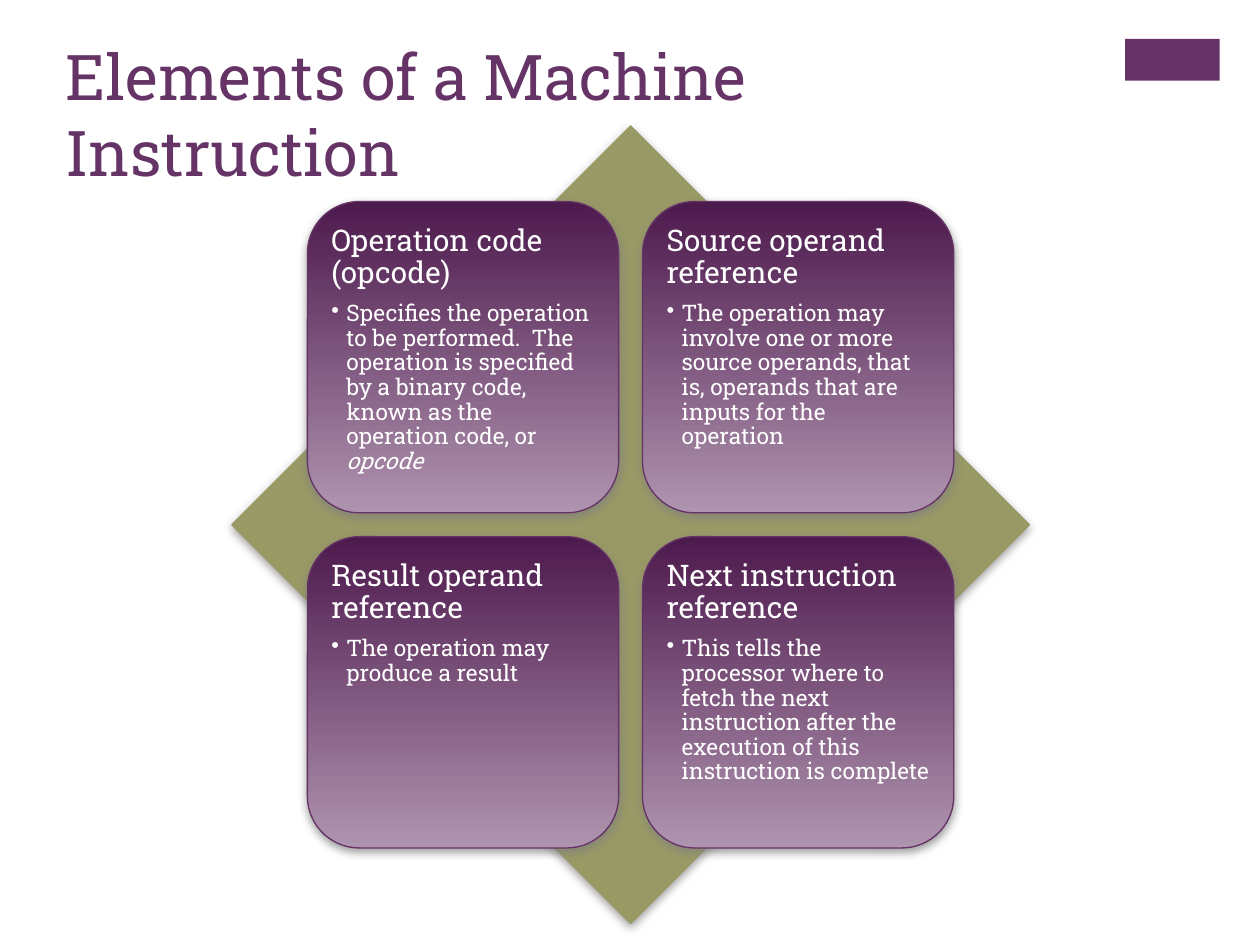
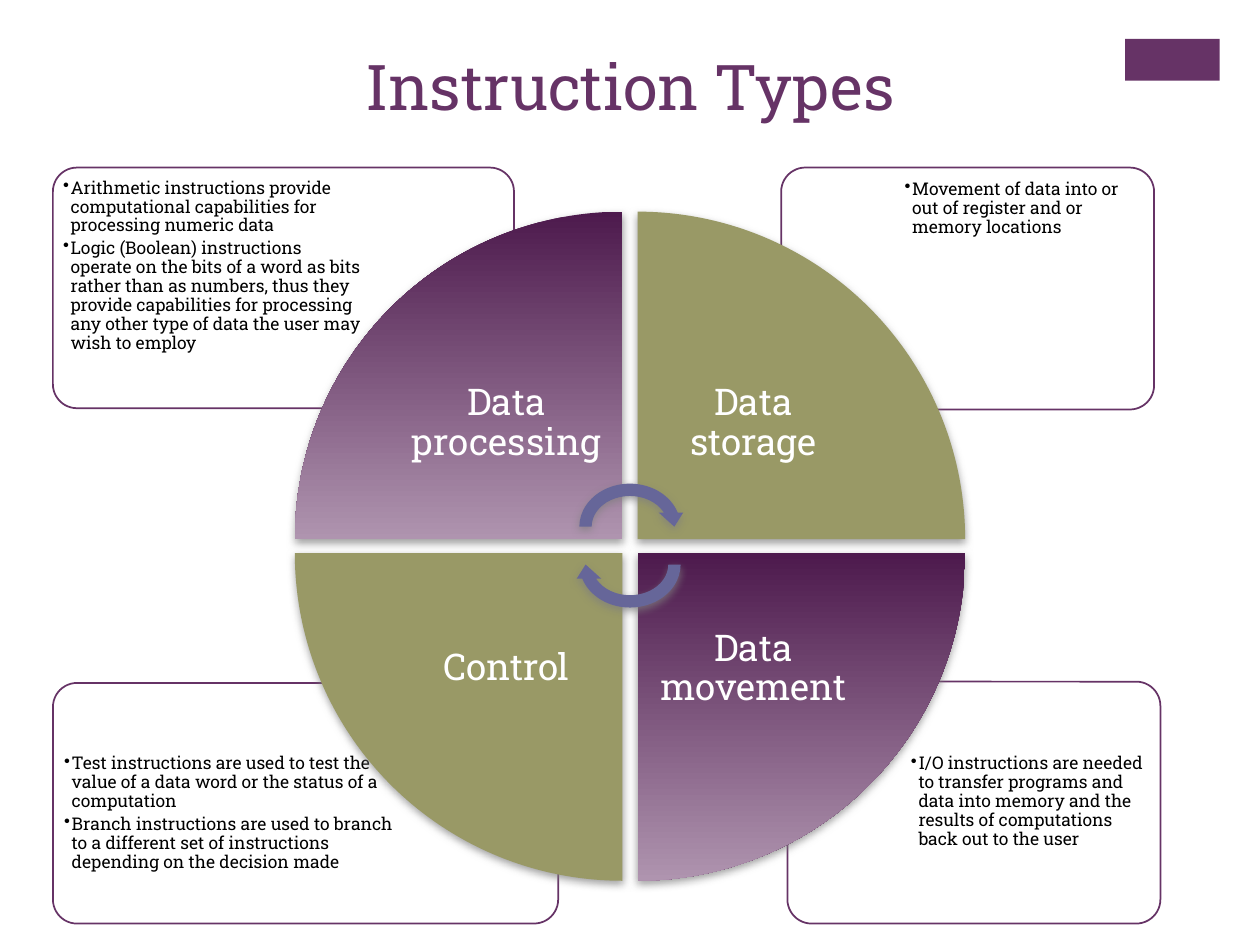
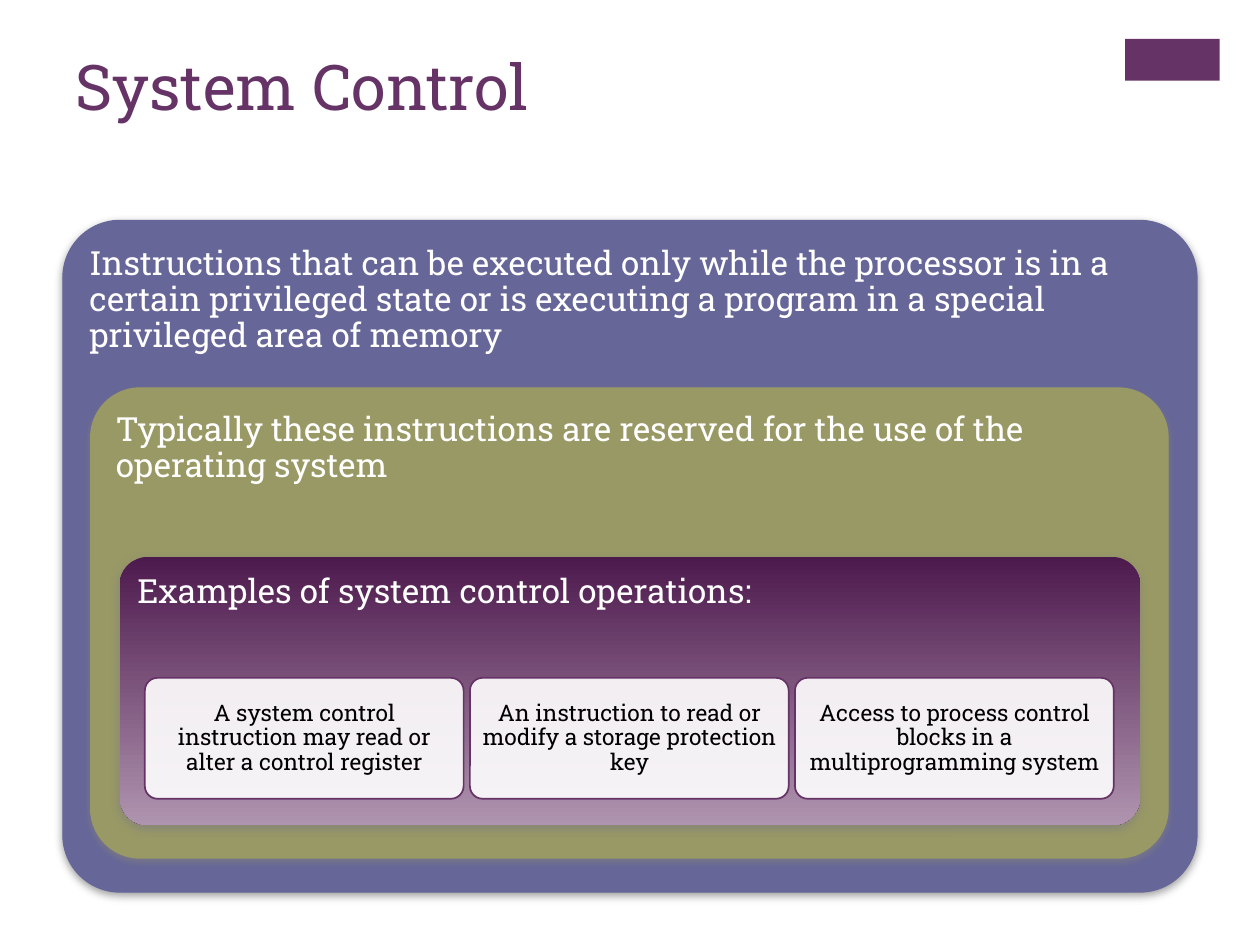
from lxml import etree
from pptx import Presentation
from pptx.dml.color import RGBColor
from pptx.enum.shapes import MSO_SHAPE
from pptx.enum.text import MSO_ANCHOR, MSO_AUTO_SIZE, PP_ALIGN
from pptx.oxml.ns import qn
from pptx.util import Pt

PX = 9144  # EMU per px, 100 px to the inch
FONT = "Roboto Slab"
PURPLE, OLIVE, SLATE = "663366", "999966", "666699"
WHITE, BLACK, GREY = "FFFFFF", "000000", "808080"
FADE = ("4D1A4D", "AF94AF")  # top and bottom of the gradient
RECT, ROUNDED, DIAMOND = MSO_SHAPE.RECTANGLE, MSO_SHAPE.ROUNDED_RECTANGLE, MSO_SHAPE.DIAMOND
WEDGE, CIRCULAR_ARROW = MSO_SHAPE.PIE_WEDGE, MSO_SHAPE.CIRCULAR_ARROW
TOP, MIDDLE = MSO_ANCHOR.TOP, MSO_ANCHOR.MIDDLE
LEFT, CENTER = PP_ALIGN.LEFT, PP_ALIGN.CENTER
NO_AUTOFIT = MSO_AUTO_SIZE.NONE
rgb = RGBColor.from_string


def add_panel(slide, kind, box, fill, line=None, width=0.75, corner=None, rotation=0, shadow=True):
    panel = slide.shapes.add_shape(kind, *[n * PX for n in box])
    panel.rotation = rotation
    if corner:
        panel.adjustments[0] = corner
    props = panel.element.spPr
    if fill == FADE:
        panel.fill.gradient()
        panel.fill.gradient_angle = 270
        props.find(qn("a:gradFill")).set("rotWithShape", "0")
        for stop, color, position in zip(panel.fill.gradient_stops, FADE, (0, 1)):
            stop.color.rgb = rgb(color)
            stop.position = position
    else:
        panel.fill.solid()
        panel.fill.fore_color.rgb = rgb(fill)
        if fill == WHITE:
            etree.SubElement(props.find(".//" + qn("a:srgbClr")), qn("a:alpha"), val="90000")
    if line:
        panel.line.color.rgb = rgb(line)
        panel.line.width = Pt(width)
    else:
        panel.line.fill.background()
    panel.shadow.inherit = False
    if shadow:
        outer = etree.SubElement(props.find(qn("a:effectLst")), qn("a:outerShdw"), blurRad="63500",
                                 dist="25400", dir="5400000", rotWithShape="0")
        tint = etree.SubElement(outer, qn("a:srgbClr"), val=GREY)
        etree.SubElement(tint, qn("a:alpha"), val="75000")
    return panel


def add_text(slide, box, paragraphs, color, inset, anchor=TOP, align=LEFT):
    """Each paragraph is (text, size, bullet indent); *stars* mark italics."""
    frame = slide.shapes.add_textbox(*[n * PX for n in box]).text_frame
    frame_format = {"word_wrap": True, "auto_size": NO_AUTOFIT, "vertical_anchor": anchor}
    for side in ("left", "top", "right", "bottom"):
        frame_format["margin_" + side] = inset * PX
    for name, value in frame_format.items():
        setattr(frame, name, value)
    for index, (text, size, indent) in enumerate(paragraphs):
        paragraph = frame.paragraphs[0] if index == 0 else frame.add_paragraph()
        if indent:
            props = paragraph._p.get_or_add_pPr()
            props.set("marL", str(indent * PX))
            props.set("indent", str(-indent * PX))
            etree.SubElement(props, qn("a:buChar"), char="•")
        paragraph_format = {"alignment": align, "line_spacing": 0.9,
                            "level": 1 if indent else 0, "space_after": Pt(2 if indent else 7)}
        for name, value in paragraph_format.items():
            setattr(paragraph, name, value)
        for part, piece in enumerate(text.split("*")):
            if piece:
                run = paragraph.add_run()
                run.text = piece
                run_format = {"name": FONT, "size": Pt(size), "italic": part == 1}
                for name, value in run_format.items():
                    setattr(run.font, name, value)
                run.font.color.rgb = rgb(color)


prs = Presentation()
prs.slide_width, prs.slide_height = 1000 * PX, 750 * PX

# Titles
titles = [
    ("Elements of a Machine Instruction", (42, 25, 826, 122), LEFT),
    ("Instruction Types", (0, 33, 1000, 122), CENTER),
    ("System Control", (50, 33, 826, 122), LEFT),
]
for text, box, align in titles:
    title = prs.slides.add_slide(prs.slide_layouts[5]).shapes.title
    title.left, title.top, title.width, title.height = [n * PX for n in box]
    title.text_frame.text = text
    title.text_frame.auto_size = NO_AUTOFIT
    title.text_frame.vertical_anchor = TOP
    heading = title.text_frame.paragraphs[0]
    heading.alignment = align
    for name, value in {"name": FONT, "size": Pt(36)}.items():
        setattr(heading.runs[0].font, name, value)
    heading.runs[0].font.color.rgb = rgb(PURPLE)
elements, types, control = prs.slides

# Corner band, moved to the master so that every slide shows it
band = add_panel(elements, RECT, (893, 31, 75, 33), PURPLE, shadow=False)
prs.slide_master.shapes.element.append(band.element)

# Slide 1: four elements on a diamond
add_panel(elements, DIAMOND, (184, 100, 633, 633), OLIVE, OLIVE)
instruction_elements = [
    ("Operation code (opcode)",
     "Specifies the operation to be performed.  The operation is specified by a binary code, "
     "known as the operation code, or *opcode*"),
    ("Source operand reference",
     "The operation may involve one or more source operands, that is, operands that are "
     "inputs for the operation"),
    ("Result operand reference", "The operation may produce a result"),
    ("Next instruction reference",
     "This tells the processor where to fetch the next instruction after the execution of "
     "this instruction is complete"),
]
for index, (name, meaning) in enumerate(instruction_elements):
    row, column = divmod(index, 2)
    x, y = 244 + 266 * column, 160 + 266 * row
    add_panel(elements, ROUNDED, (x, y, 247, 247), FADE, PURPLE)
    add_text(elements, (x + 12, y + 12, 223, 223), [(name, 17, 0), (meaning, 13, 12)], WHITE, 7)

# Slide 2: explanations in the corners
explanations = [
    ((625, 541, 296, 192), (718, 594, 199, 136), 5,
     ["I/O instructions are needed to transfer programs and data into memory and the results "
      "of computations back out to the user"]),
    ((42, 542, 401, 191), (46, 594, 273, 135), 5,
     ["Test instructions are used to test the value of a data word or the status of a computation",
      "Branch instructions are used to branch to a different set of instructions depending on "
      "the decision made"]),
    ((620, 133, 296, 192), (713, 138, 199, 136), 5,
     ["Movement of data into or out of register and or memory locations"]),
    ((42, 133, 366, 191), (46, 138, 248, 135), 4,
     ["Arithmetic instructions provide computational capabilities for processing numeric data",
      "Logic (Boolean) instructions operate on the bits of a word as bits rather than as "
      "numbers, thus they provide capabilities for processing any other type of data the user "
      "may wish to employ"]),
]
for card, text_area, inset, points in explanations:
    add_panel(types, ROUNDED, card, WHITE, PURPLE, 1, 0.1, shadow=False)
    add_text(types, text_area, [(point, 10, 6) for point in points], BLACK, inset)

# Slide 2: wheel of four types, clockwise from top left
wheel = [
    ("Data processing", 0, 0, FADE),
    ("Data storage", 1, 0, OLIVE),
    ("Data movement", 1, 1, FADE),
    ("Control", 0, 1, OLIVE),
]
for index, (name, column, row, fill) in enumerate(wheel):
    x, y = 234 + 272 * column, 168 + 271 * row
    add_panel(types, WEDGE, (x, y, 260, 260), fill, rotation=90 * index)
    label = (x + 76 * (1 - column), y + 76 * (1 - row), 184, 184)
    add_text(types, label, [(name, 21, 0)], WHITE, 16, MIDDLE, CENTER)
for y, rotation in ((379, 0), (409, 180)):
    add_panel(types, CIRCULAR_ARROW, (455, y, 90, 78), SLATE, rotation=rotation)

# Slide 3: nested panels
layers = [
    ((50, 175, 900, 533), SLATE, SLATE, 0.085, 13,
     "Instructions that can be executed only while the processor is in a certain privileged "
     "state or is executing a program in a special privileged area of memory"),
    ((72, 308, 855, 373), OLIVE, OLIVE, 0.105, 12,
     "Typically these instructions are reserved for the use of the operating system"),
    ((95, 442, 810, 213), FADE, None, 0.105, 6, "Examples of system control operations:"),
]
for box, fill, line, corner, gap, statement in layers:
    x, y, width, height = box
    add_panel(control, ROUNDED, box, fill, line, corner=corner)
    text_area = (x + gap, y + gap, width - 2 * gap, height - 2 * gap)
    add_text(control, text_area, [(statement, 19, 0)], WHITE, 8)

# Slide 3: row of examples
examples = [
    "A system control instruction may read or alter a control register",
    "An instruction to read or modify a storage protection key",
    "Access to process control blocks in a multiprogramming system",
]
for index, example in enumerate(examples):
    x = 115 + 258 * index
    add_panel(control, ROUNDED, (x, 538, 253, 96), WHITE, PURPLE, 1, 0.105, shadow=False)
    add_text(control, (x + 3, 541, 247, 90), [(example, 13, 0)], BLACK, 5, MIDDLE, CENTER)

prs.save("out.pptx")
